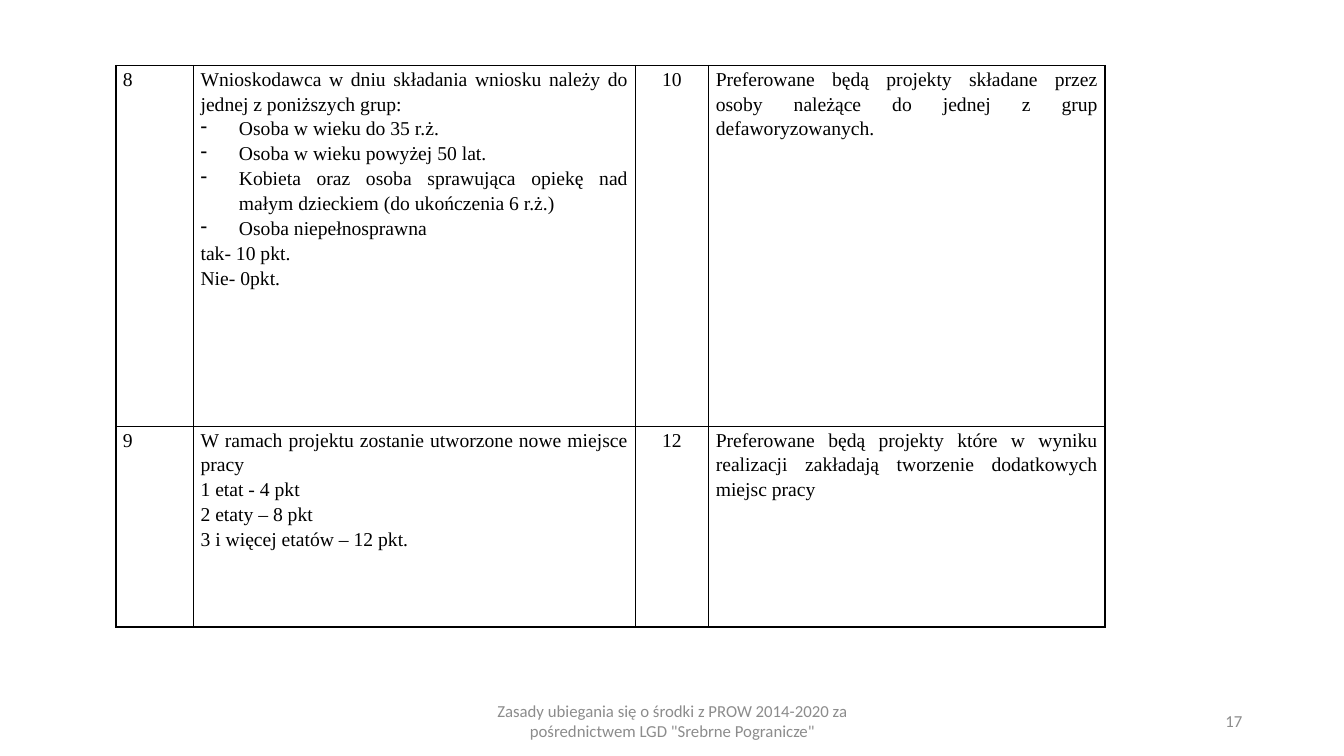
from dataclasses import dataclass

from lxml import etree
from pptx import Presentation
from pptx import util as u
from pptx.dml.color import RGBColor
from pptx.enum import text as t
from pptx.oxml import ns

COLORS = {"ink": "000000", "muted": "8C8C8C"}
LEFT, MID, RIGHT, JUST = (
    t.PP_ALIGN.LEFT, t.PP_ALIGN.CENTER, t.PP_ALIGN.RIGHT, t.PP_ALIGN.JUSTIFY)
COLS = (0.77, 4.38, 0.73, 3.93)
ALIGNS = (LEFT, JUST, MID, JUST)
INDENT = 0.38


@dataclass(frozen=True)
class Line:
    text: str
    dash: bool = False


@dataclass(frozen=True)
class Row:
    height: float
    cells: tuple[tuple[Line, ...], ...]


@dataclass(frozen=True)
class Note:
    text: str
    left: float
    width: float
    align: t.PP_ALIGN


ROWS = (
    Row(3.58, (
        (Line("8"),),
        (
            Line("Wnioskodawca w dniu składania wniosku należy do jednej z poniższych grup:"),
            Line("Osoba w wieku do 35 r.ż.", True),
            Line("Osoba w wieku powyżej 50 lat.", True),
            Line("Kobieta oraz osoba sprawująca opiekę nad małym dzieckiem "
                 "(do ukończenia 6 r.ż.)", True),
            Line("Osoba niepełnosprawna", True),
            Line("tak- 10 pkt."),
            Line("Nie- 0pkt."),
        ),
        (Line("10"),),
        (Line("Preferowane będą projekty składane przez osoby należące "
              "do jednej z grup defaworyzowanych."),),
    )),
    Row(1.99, (
        (Line("9"),),
        (
            Line("W ramach projektu zostanie utworzone nowe miejsce pracy"),
            Line("1 etat - 4 pkt"),
            Line("2 etaty – 8 pkt"),
            Line("3 i więcej etatów – 12 pkt."),
        ),
        (Line("12"),),
        (Line("Preferowane będą projekty które w wyniku realizacji zakładają "
              "tworzenie dodatkowych miejsc pracy"),),
    )),
)

NOTES = (
    Note('Zasady ubiegania się o środki z PROW 2014-2020 za pośrednictwem '
         'LGD "Srebrne Pogranicze"', 4.42, 4.5, MID),
    Note("17", 9.42, 3, RIGHT),
)


def add_run(para, words: str, font: str, size: int, color: str) -> None:
    run = para.add_run()
    run.text = words
    run.font.name = font
    run.font.size = u.Pt(size)
    run.font.color.rgb = RGBColor.from_string(COLORS[color])


def add_dash(para) -> None:
    """Give the paragraph a hanging dash bullet."""
    props = para._p.get_or_add_pPr()
    props.set("marL", str(u.Inches(INDENT)))
    props.set("indent", str(u.Inches(-INDENT)))
    etree.SubElement(props, ns.qn("a:buChar"), char="-")


def add_edges(cell) -> None:
    props = cell._tc.get_or_add_tcPr()
    for side in ("lnL", "lnR", "lnT", "lnB"):
        edge = etree.SubElement(props, ns.qn(f"a:{side}"), w=str(u.Pt(1)))
        fill = etree.SubElement(edge, ns.qn("a:solidFill"))
        etree.SubElement(fill, ns.qn("a:srgbClr"), val=COLORS["ink"])


def fill_cell(cell, lines: tuple[Line, ...], align: t.PP_ALIGN) -> None:
    cell.margin_left = cell.margin_right = u.Inches(0.07)
    cell.margin_top = cell.margin_bottom = 0
    add_edges(cell)
    cell.fill.background()
    frame = cell.text_frame
    for i, line in enumerate(lines):
        para = frame.add_paragraph() if i else frame.paragraphs[0]
        para.alignment = align
        para.line_spacing = 1.15
        if line.dash:
            add_dash(para)
        add_run(para, line.text, "Times New Roman", 14, "ink")


def add_grid(slide) -> None:
    high = sum(row.height for row in ROWS)
    grid = slide.shapes.add_table(
        len(ROWS), len(COLS), u.Inches(1.15), u.Inches(0.65),
        u.Inches(sum(COLS)), u.Inches(high)).table
    grid.first_row = grid.horz_banding = False
    for col, width in zip(grid.columns, COLS):
        col.width = u.Inches(width)
    for r, row in enumerate(ROWS):
        grid.rows[r].height = u.Inches(row.height)
        for c, (lines, align) in enumerate(zip(row.cells, ALIGNS)):
            fill_cell(grid.cell(r, c), lines, align)


def add_note(slide, note: Note) -> None:
    box = slide.shapes.add_textbox(
        u.Inches(note.left), u.Inches(6.95), u.Inches(note.width), u.Inches(0.4))
    frame = box.text_frame
    frame.word_wrap = True
    frame.vertical_anchor = t.MSO_ANCHOR.MIDDLE
    para = frame.paragraphs[0]
    para.alignment = note.align
    add_run(para, note.text, "Calibri", 12, "muted")


def main() -> None:
    deck = Presentation()
    deck.slide_width, deck.slide_height = u.Inches(13.33), u.Inches(7.5)
    slide = deck.slides.add_slide(deck.slide_layouts[6])
    for note in NOTES:
        add_note(slide, note)
    add_grid(slide)
    deck.save("out.pptx")


if __name__ == "__main__":
    main()
